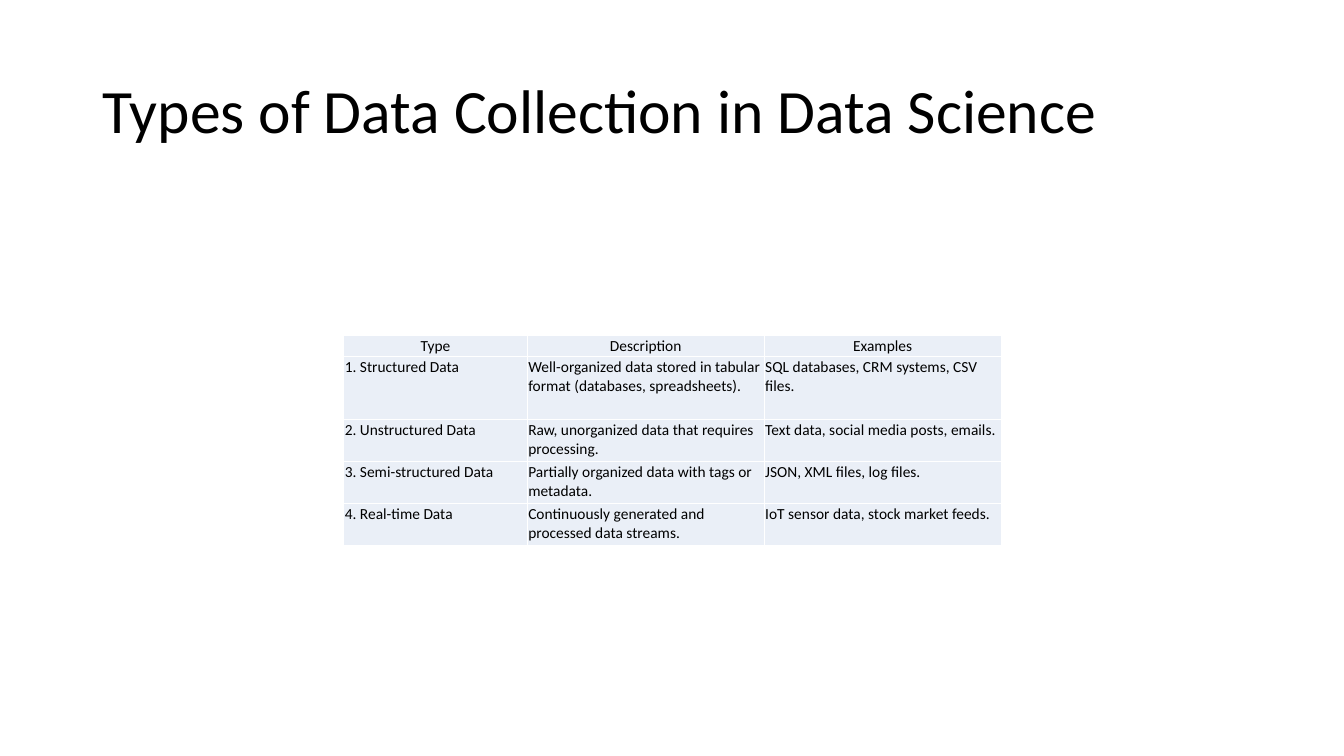
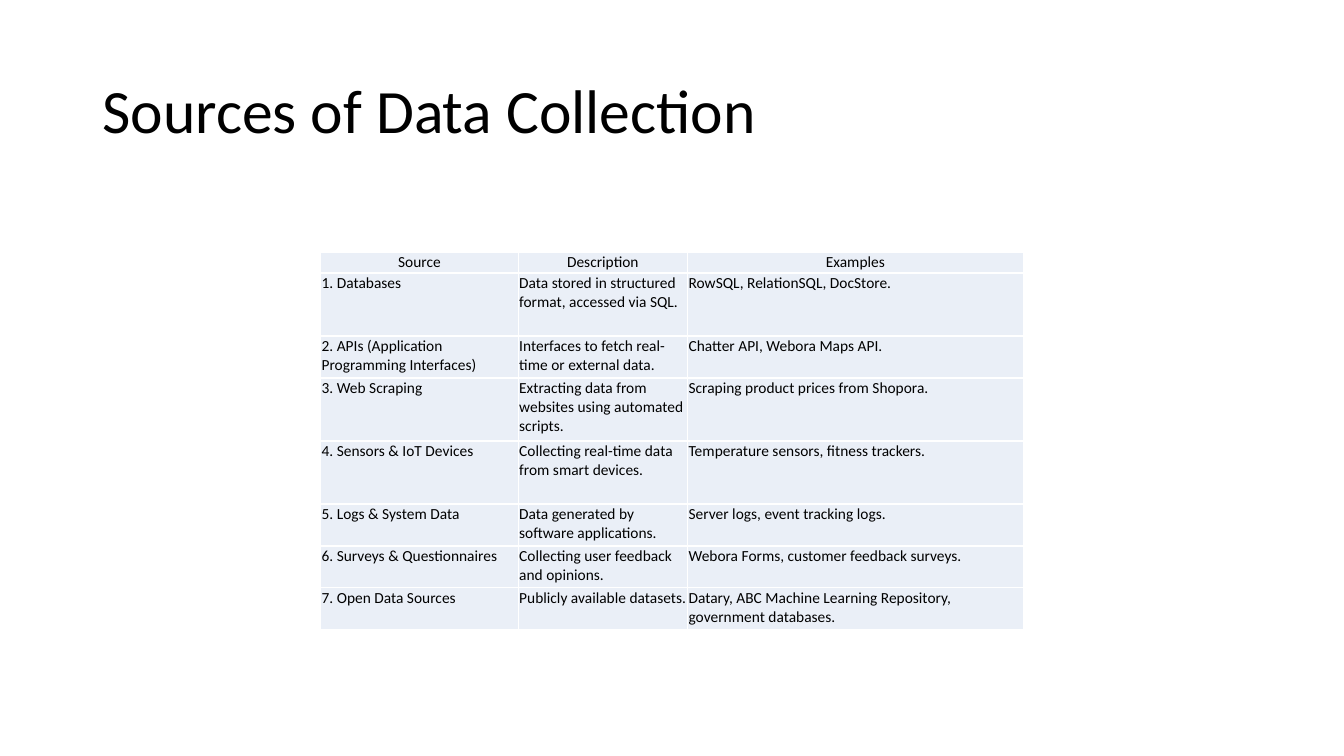
"""Build two slides that each show a title and a reference table on data collection."""
from dataclasses import dataclass

from lxml import etree
from pptx import Presentation
from pptx import util as u
from pptx.dml.color import RGBColor
from pptx.enum import text
from pptx.oxml import ns

COLORS = {"text": "000000", "cell": "EAEFF7", "border": "FFFFFF"}
FONT = "Calibri"
TITLE_SIZE = 44
CELL_SIZE = 11
BORDER_WIDTH = 1


@dataclass(frozen=True)
class Row:
    lines: int
    cells: tuple[str, str, str]


@dataclass(frozen=True)
class TableSlide:
    title: str
    left: float
    top: float
    height: float
    widths: tuple[float, float, float]
    rows: tuple[Row, ...]


SLIDES = (
    TableSlide(
        "Types of Data Collection in Data Science",
        3.41, 3.33, 2.08, (1.82, 2.35, 2.35),
        (
            Row(1, ("Type", "Description", "Examples")),
            Row(3, ("1. Structured Data",
                    "Well-organized data stored in tabular format (databases, spreadsheets).",
                    "SQL databases, CRM systems, CSV files.")),
            Row(2, ("2. Unstructured Data",
                    "Raw, unorganized data that requires processing.",
                    "Text data, social media posts, emails.")),
            Row(2, ("3. Semi-structured Data",
                    "Partially organized data with tags or metadata.",
                    "JSON, XML files, log files.")),
            Row(2, ("4. Real-time Data",
                    "Continuously generated and processed data streams.",
                    "IoT sensor data, stock market feeds.")),
        ),
    ),
    TableSlide(
        "Sources of Data Collection",
        3.18, 2.5, 3.75, (1.96, 1.68, 3.33),
        (
            Row(1, ("Source", "Description", "Examples")),
            Row(3, ("1. Databases",
                    "Data stored in structured format, accessed via SQL.",
                    "RowSQL, RelationSQL, DocStore.")),
            Row(2, ("2. APIs (Application Programming Interfaces)",
                    "Interfaces to fetch real-time or external data.",
                    "Chatter API, Webora Maps API.")),
            Row(3, ("3. Web Scraping",
                    "Extracting data from websites using automated scripts.",
                    "Scraping product prices from Shopora.")),
            Row(3, ("4. Sensors & IoT Devices",
                    "Collecting real-time data from smart devices.",
                    "Temperature sensors, fitness trackers.")),
            Row(2, ("5. Logs & System Data",
                    "Data generated by software applications.",
                    "Server logs, event tracking logs.")),
            Row(2, ("6. Surveys & Questionnaires",
                    "Collecting user feedback and opinions.",
                    "Webora Forms, customer feedback surveys.")),
            Row(2, ("7. Open Data Sources",
                    "Publicly available datasets.",
                    "Datary, ABC Machine Learning Repository, government databases.")),
        ),
    ),
)


def add_run(p, content: str, size: float) -> None:
    r = p.add_run()
    r.text = content
    r.font.name = FONT
    r.font.size = u.Pt(size)
    r.font.color.rgb = RGBColor.from_string(COLORS["text"])


def add_title(s, content: str) -> None:
    sp = s.shapes.add_textbox(u.Inches(0.92), u.Inches(0.4), u.Inches(11.5), u.Inches(1.45))
    tf = sp.text_frame
    tf.word_wrap = True
    tf.vertical_anchor = text.MSO_ANCHOR.MIDDLE
    p = tf.paragraphs[0]
    p.line_spacing = 0.9
    add_run(p, content, TITLE_SIZE)


def add_borders(cell) -> None:
    tc_pr = cell._tc.get_or_add_tcPr()
    for side in ("lnL", "lnR", "lnT", "lnB"):
        ln = etree.SubElement(tc_pr, ns.qn(f"a:{side}"), w=str(u.Pt(BORDER_WIDTH)))
        fill = etree.SubElement(ln, ns.qn("a:solidFill"))
        etree.SubElement(fill, ns.qn("a:srgbClr"), val=COLORS["border"])


def fill_cell(cell, content: str, is_header: bool) -> None:
    cell.margin_left = cell.margin_right = cell.margin_top = u.Inches(0.01)
    cell.margin_bottom = u.Inches(0)
    add_borders(cell)
    cell.fill.solid()
    cell.fill.fore_color.rgb = RGBColor.from_string(COLORS["cell"])
    p = cell.text_frame.paragraphs[0]
    p.alignment = text.PP_ALIGN.CENTER if is_header else text.PP_ALIGN.LEFT
    add_run(p, content, CELL_SIZE)


def add_table(s, data: TableSlide) -> None:
    frame = s.shapes.add_table(
        len(data.rows), len(data.widths), u.Inches(data.left), u.Inches(data.top),
        u.Inches(sum(data.widths)), u.Inches(data.height))
    table = frame.table
    table.first_row = table.horz_banding = False
    for column, width in zip(table.columns, data.widths):
        column.width = u.Inches(width)
    line_height = data.height / sum(row.lines for row in data.rows)
    for i, row in enumerate(data.rows):
        table.rows[i].height = u.Inches(row.lines * line_height)
        for j, content in enumerate(row.cells):
            fill_cell(table.cell(i, j), content, is_header=i == 0)


def main() -> None:
    prs = Presentation()
    prs.slide_width, prs.slide_height = u.Inches(13.33), u.Inches(7.5)
    for data in SLIDES:
        s = prs.slides.add_slide(prs.slide_layouts[6])
        add_title(s, data.title)
        add_table(s, data)
    prs.save("out.pptx")


if __name__ == "__main__":
    main()
